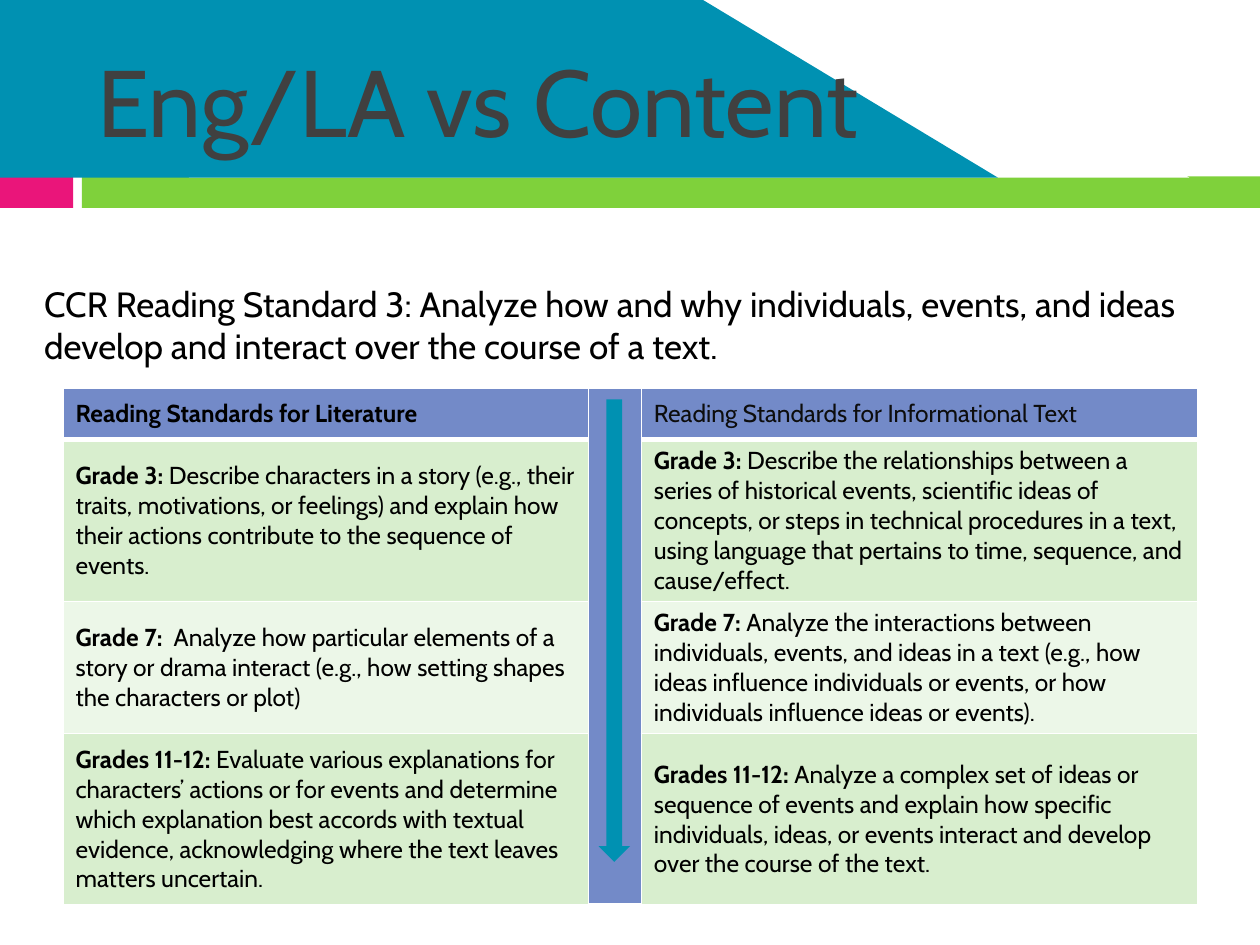
from dataclasses import dataclass

from pptx import Presentation
from pptx.dml.color import RGBColor
from pptx.enum.shapes import MSO_SHAPE
from pptx.enum.text import MSO_ANCHOR, PP_ALIGN
from pptx.oxml import parse_xml
from pptx.oxml.ns import nsdecls
from pptx.util import Inches, Pt


@dataclass(frozen=True)
class Theme:
    font: str = "Cabin"
    white: str = "FFFFFF"
    black: str = "000000"
    ink: str = "0D0D0D"
    gray: str = "404040"
    teal: str = "0091B2"
    pink: str = "EA157A"
    green: str = "7FD13B"
    blue: str = "738AC8"
    bands: tuple = ("D8EECE", "ECF7E8")
    title: int = 54
    body: int = 20
    cell: int = 14


THEME = Theme()

HEADS = (
    ("Reading Standards for Literature", True, THEME.black),
    ("Reading Standards for Informational Text", False, THEME.ink),
)
# Each row holds a (grade, text) pair for literature and informational text
ROWS = (
    (("Grade 3: ", "Describe characters in a story (e.g., their traits, "
      "motivations, or feelings) and explain how their actions contribute "
      "to the sequence of events."),
     ("Grade 3: ", "Describe the relationships between a series of historical "
      "events, scientific ideas of concepts, or steps in technical procedures "
      "in a text, using language that pertains to time, sequence, and "
      "cause/effect.")),
    (("Grade 7:  ", "Analyze how particular elements of a story or drama "
      "interact (e.g., how setting shapes the characters or plot)"),
     ("Grade 7: ", "Analyze the interactions between individuals, events, and "
      "ideas in a text (e.g., how ideas influence individuals or events, or "
      "how individuals influence ideas or events).")),
    (("Grades 11-12: ", "Evaluate various explanations for characters’ actions "
      "or for events and determine which explanation best accords with textual "
      "evidence, acknowledging where the text leaves matters uncertain."),
     ("Grades 11-12: ", "Analyze a complex set of ideas or sequence of events "
      "and explain how specific individuals, ideas, or events interact and "
      "develop over the course of the text.")),
)
WIDTHS = (4.17, 0.42, 4.42)
HEIGHTS = (0.41, 1.28, 1.05, 1.36)


def paint(shape, color):
    shape.shadow.inherit = False
    shape.fill.solid()
    shape.fill.fore_color.rgb = RGBColor.from_string(color)
    shape.line.fill.background()


def add_block(slide, kind, box, color):
    shape = slide.shapes.add_shape(kind, *map(Inches, box))
    paint(shape, color)


def add_panel(slide, points, color):
    dots = [(Inches(x), Inches(y)) for x, y in points]
    pen = slide.shapes.build_freeform(*dots[0])
    pen.add_line_segments(dots[1:], close=True)
    paint(pen.convert_to_shape(), color)


def style(par, size, color, bold=None):
    font = par.font
    font.name = THEME.font
    font.size = Pt(size)
    font.bold = bold
    font.color.rgb = RGBColor.from_string(color)
    par.alignment = PP_ALIGN.LEFT


def fill_holder(holder, box, text, size, color, anchor):
    holder.left, holder.top, holder.width, holder.height = map(Inches, box)
    frame = holder.text_frame
    frame.text = text
    frame.vertical_anchor = anchor
    par = frame.paragraphs[0]
    style(par, size, color)
    par.space_before = Pt(0)
    # Bring the text in front of the banner
    holder.element.getparent().append(holder.element)
    return frame


def format_cell(cell, color, base=1):
    props = cell._tc.get_or_add_tcPr()
    for side, width in (("L", 1), ("R", 1), ("T", 1), ("B", base)):
        props.append(parse_xml(
            f'<a:ln{side} {nsdecls("a")} w="{Pt(width)}"><a:solidFill>'
            f'<a:srgbClr val="{THEME.white}"/></a:solidFill></a:ln{side}>'))
    cell.fill.solid()
    cell.fill.fore_color.rgb = RGBColor.from_string(color)
    cell.vertical_anchor = MSO_ANCHOR.MIDDLE


def add_grid(slide):
    frame = slide.shapes.add_table(
        len(HEIGHTS), len(WIDTHS), Inches(0.5), Inches(3.08),
        Inches(sum(WIDTHS)), Inches(sum(HEIGHTS)))
    table = frame.table
    for col, width in zip(table.columns, WIDTHS):
        col.width = Inches(width)
    for row, height in zip(table.rows, HEIGHTS):
        row.height = Inches(height)

    # Middle column, one tall cell behind the arrow
    table.cell(0, 1).merge(table.cell(len(ROWS), 1))
    format_cell(table.cell(0, 1), THEME.blue, 3)

    # Header row
    for col, (text, bold, color) in zip((0, 2), HEADS):
        cell = table.cell(0, col)
        format_cell(cell, THEME.blue, 3)
        cell.text = text
        style(cell.text_frame.paragraphs[0], THEME.cell, color, bold)

    # Grade rows in two shades
    for row, pair in enumerate(ROWS, 1):
        for col, (grade, text) in zip((0, 2), pair):
            cell = table.cell(row, col)
            format_cell(cell, THEME.bands[(row - 1) % 2])
            par = cell.text_frame.paragraphs[0]
            style(par, THEME.cell, THEME.black)
            for part, bold in ((grade, True), (text, False)):
                run = par.add_run()
                run.text = part
                run.font.bold = bold


def add_banner(slide):
    add_block(slide, MSO_SHAPE.RECTANGLE, (0, 1.4, 0.58, 0.25), THEME.pink)
    add_block(slide, MSO_SHAPE.RECTANGLE, (0.65, 1.4, 9.35, 0.25), THEME.green)
    for left, shift, color in ((1.5, 1.52, THEME.white), (0, 0, THEME.teal)):
        add_panel(slide, ((left, 0), (5.58 + shift, 0), (7.92 + shift, 1.41),
                          (left, 1.41)), color)


def main():
    deck = Presentation()
    deck.slide_width, deck.slide_height = Inches(10), Inches(7.5)
    slide = deck.slides.add_slide(deck.slide_layouts[1])

    add_banner(slide)

    # Title and the standard
    fill_holder(slide.shapes.title, (0.67, 0.25, 8.92, 1.08),
                "Eng/LA vs Content", THEME.title, THEME.gray, MSO_ANCHOR.MIDDLE)
    frame = fill_holder(
        slide.placeholders[1], (0.25, 1.75, 9.5, 5.45),
        "CCR Reading Standard 3: Analyze how and why individuals, events, "
        "and ideas develop and interact over the course of a text.",
        THEME.body, THEME.black, MSO_ANCHOR.TOP)
    frame.margin_top = Inches(0.49)
    props = frame.paragraphs[0]._p.get_or_add_pPr()
    props.set("marL", "0")
    props.set("indent", "0")
    props.append(parse_xml(f'<a:buNone {nsdecls("a")}/>'))
    # Default run properties follow the bullet
    props.append(props.find("{*}defRPr"))

    # Table and the arrow through the grades
    add_grid(slide)
    add_block(slide, MSO_SHAPE.DOWN_ARROW, (4.75, 3.17, 0.25, 3.67), THEME.teal)
    deck.save("out.pptx")


if __name__ == "__main__":
    main()
